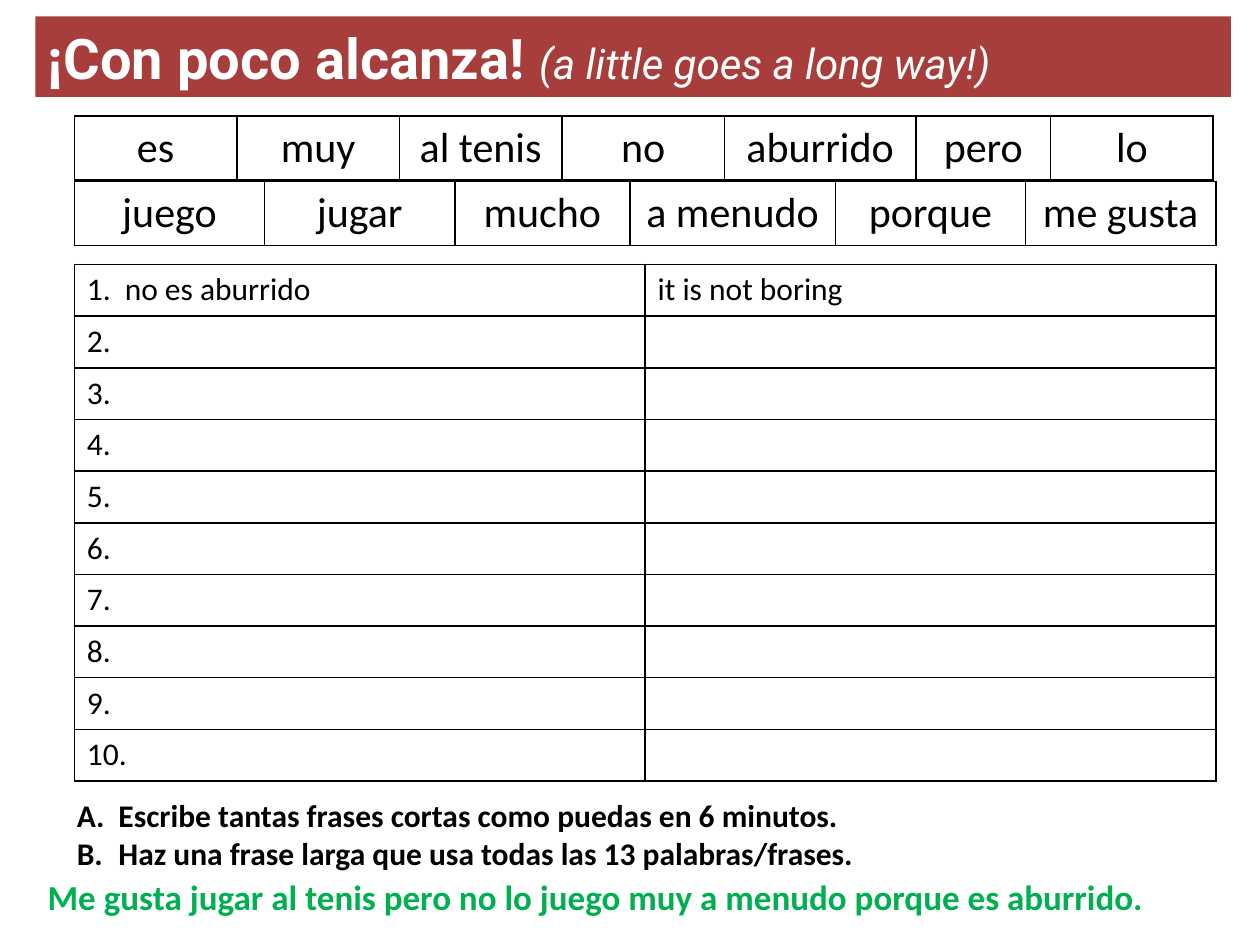
from lxml import etree
from pptx import Presentation
from pptx import util as u
from pptx.dml.color import RGBColor
from pptx.enum import text
from pptx.oxml import ns

COLORS = {"banner": "A73E3B", "white": "FFFFFF", "ink": "000000", "answer": "00B050"}
LEFT, WIDTH = 0.59, 9.06

WORD_ROWS = [  # top, words, column widths
    (0.92, ["es", "muy", "al tenis", "no", "aburrido", "pero", "lo"],
     [1.29, 1.29, 1.29, 1.29, 1.52, 1.07, 1.29]),
    (1.44, ["juego", "jugar", "mucho", "a menudo", "porque", "me gusta"],
     [1.51, 1.51, 1.39, 1.63, 1.51, 1.51]),
]
TASKS = [
    "A.\tEscribe tantas frases cortas como puedas en 6 minutos.",
    "B.\tHaz una frase larga que usa todas las 13 palabras/frases.",
]


def write(p, words, size=18, font="Calibri", color="ink", bold=False,
          italic=False, align=text.PP_ALIGN.LEFT, hang=0):
    """Add a formatted run; hang is the indent after a number or letter."""
    r = p.add_run()
    r.text = words
    r.font.size = u.Pt(size)
    r.font.name = font
    r.font.bold = bold
    r.font.italic = italic
    r.font.color.rgb = RGBColor.from_string(COLORS[color])
    p.alignment = align
    p.space_before = u.Pt(0)
    if hang:
        pPr = p._p.get_or_add_pPr()
        pPr.set("marL", str(u.Inches(hang)))
        pPr.set("indent", str(-u.Inches(hang)))


def place(sp, left, top, width, height):
    sp.left, sp.top = u.Inches(left), u.Inches(top)
    sp.width, sp.height = u.Inches(width), u.Inches(height)
    tf = sp.text_frame
    tf.word_wrap = True
    tf.auto_size = text.MSO_AUTO_SIZE.NONE
    return tf


def add_borders(cell):
    tcPr = cell._tc.get_or_add_tcPr()
    for i, side in enumerate(("lnL", "lnR", "lnT", "lnB")):
        ln = etree.Element(ns.qn(f"a:{side}"), w=str(u.Pt(1)))
        fill = etree.SubElement(ln, ns.qn("a:solidFill"))
        etree.SubElement(fill, ns.qn("a:srgbClr"), val=COLORS["ink"])
        tcPr.insert(i, ln)


def add_grid(slide, top, rows, widths, row_height, anchor, **fmt):
    frame = slide.shapes.add_table(
        len(rows), len(widths), u.Inches(LEFT), u.Inches(top),
        u.Inches(WIDTH), u.Inches(row_height * len(rows)))
    table = frame.table
    table.first_row = table.horz_banding = False
    for col, width in zip(table.columns, widths):
        col.width = u.Inches(width)
    for row, words in zip(table.rows, rows):
        row.height = u.Inches(row_height)
        for cell, word in zip(row.cells, words):
            cell.fill.background()
            cell.vertical_anchor = anchor
            add_borders(cell)
            if word:
                write(cell.text_frame.paragraphs[0], word, **fmt)


def add_title(slide):
    sp = slide.shapes.title
    tf = place(sp, 0.28, 0.13, 9.49, 0.64)
    sp.fill.solid()
    sp.fill.fore_color.rgb = RGBColor.from_string(COLORS["banner"])
    p = tf.paragraphs[0]
    write(p, "¡Con poco alcanza! ", size=32, font="Roboto", color="white", bold=True)
    write(p, "(a little goes a long way!)", size=24, font="Roboto",
          color="white", italic=True)


def add_tasks(slide):
    tf = place(slide.placeholders[1], 0.51, 6.27, 9.13, 0.71)
    for i, task in enumerate(TASKS):
        p = tf.add_paragraph() if i else tf.paragraphs[0]
        write(p, task, bold=True, hang=0.33)
        etree.SubElement(p._p.get_or_add_pPr(), ns.qn("a:buNone"))


def add_answer(slide):
    sp = slide.shapes.add_textbox(0, 0, 0, 0)
    tf = place(sp, 0.28, 6.9, 9.37, 0.44)
    write(tf.paragraphs[0],
          "Me gusta jugar al tenis pero no lo juego muy a menudo porque es aburrido.",
          size=20, color="answer", bold=True)


def main():
    prs = Presentation()
    prs.slide_width, prs.slide_height = u.Inches(10), u.Inches(7.5)
    slide = prs.slides.add_slide(prs.slide_layouts[1])

    # Heading
    add_title(slide)

    # Word bank
    for top, words, widths in WORD_ROWS:
        add_grid(slide, top, [words], widths, 0.5, text.MSO_ANCHOR.MIDDLE,
                 size=24, align=text.PP_ALIGN.CENTER)

    # Numbered answer lines, the first one filled in
    lines = [["1.\tno es aburrido", "it is not boring"]]
    lines += [[f"{n}.", ""] for n in range(2, 11)]
    add_grid(slide, 2.1, lines, [WIDTH / 2] * 2, 0.41, text.MSO_ANCHOR.TOP, hang=0.3)

    # Instructions and model sentence
    add_tasks(slide)
    add_answer(slide)

    prs.save("out.pptx")


if __name__ == "__main__":
    main()
